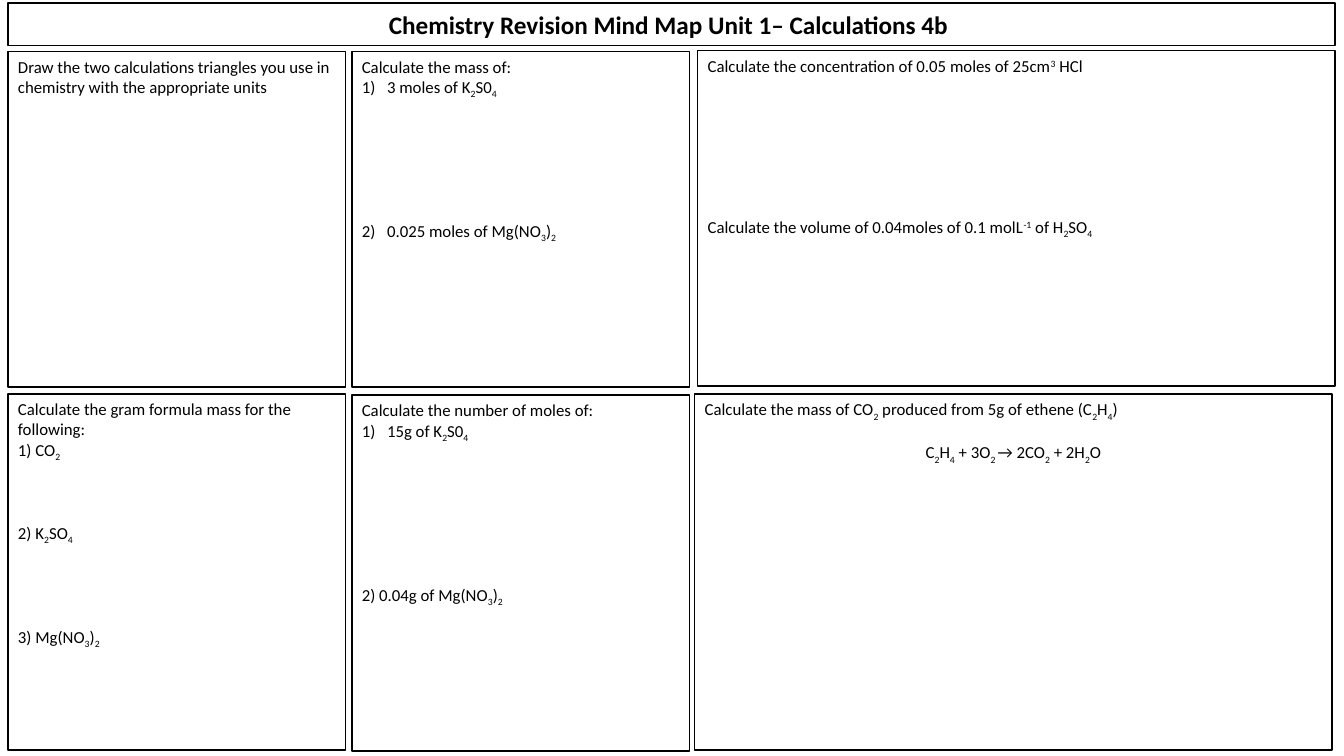
from dataclasses import dataclass

from lxml.etree import SubElement
from pptx import Presentation
from pptx.dml.color import RGBColor
from pptx.enum.shapes import MSO_SHAPE as Shape
from pptx.enum.text import MSO_ANCHOR as Anchor, MSO_AUTO_SIZE as AutoSize, PP_ALIGN as Align
from pptx.oxml.ns import qn
from pptx.util import Inches, Pt


@dataclass(frozen=True)
class Theme:
    font: str = "Calibri"
    ink: RGBColor = RGBColor(0, 0, 0)
    paper: RGBColor = RGBColor(255, 255, 255)
    title_size: float = 18
    body_size: float = 12
    answer_line: float = 14.4  # points per line of answer space
    border: float = 1


def write(para, text, theme, size, bold=False, align=Align.LEFT, gap=0, numbered=False):
    """Write text in which {_2} is a subscript and {^3} a superscript."""
    if numbered:
        props = para._p.get_or_add_pPr()
        props.set("marL", str(Inches(0.25)))
        props.set("indent", str(-Inches(0.25)))
        SubElement(props, qn("a:buFont"), typeface="+mj-lt")
        SubElement(props, qn("a:buAutoNum"), type="arabicParenR")
    para.alignment = align
    if gap:
        para.space_before = Pt(gap * theme.answer_line)
    for part in text.replace("}", "{").split("{"):
        if not part:
            continue
        baseline = {"_": "-25000", "^": "30000"}.get(part[0])
        span = para.add_run()
        span.text = part[1:] if baseline else part
        span.font.name = theme.font
        span.font.size = Pt(size)
        span.font.bold = bold
        span.font.color.rgb = theme.ink
        if baseline:
            span._r.get_or_add_rPr().set("baseline", baseline)


class Worksheet:
    """Holds the theme and slide, and places panels on a grid of columns and rows."""

    left, top = 0.08, 0.51
    column_step, row_step = 3.41, 3.4
    column_widths = (3.35, 3.35, 6.32)
    row_heights = (3.33, 3.53)

    def __init__(self, page, theme):
        self.page, self.theme = page, theme

    def frame(self, box, anchor):
        box.fill.solid()
        box.fill.fore_color.rgb = self.theme.paper
        box.line.color.rgb = self.theme.ink
        box.line.width = Pt(self.theme.border)
        text = box.text_frame
        text.word_wrap = True
        text.auto_size = AutoSize.NONE
        text.vertical_anchor = anchor
        return text

    def title(self, text):
        box = self.page.shapes.title
        box.left, box.top = Inches(self.left), Inches(0.03)
        box.width, box.height = Inches(13.16), Inches(0.42)
        outline = SubElement(box._element.spPr, qn("a:prstGeom"), prst="roundRect")
        SubElement(outline, qn("a:avLst"))
        para = self.frame(box, Anchor.MIDDLE).paragraphs[0]
        write(para, text, self.theme, self.theme.title_size, bold=True, align=Align.CENTER)

    def panel(self, column, row, lines, nudge=(0, 0)):
        box = self.page.shapes.add_shape(
            Shape.RECTANGLE,
            Inches(self.left + column * self.column_step + nudge[0]),
            Inches(self.top + row * self.row_step + nudge[1]),
            Inches(self.column_widths[column]),
            Inches(self.row_heights[row]),
        )
        box.shadow.inherit = False
        frame = self.frame(box, Anchor.TOP)
        for index, (text, style) in enumerate(lines):
            para = frame.add_paragraph() if index else frame.paragraphs[0]
            write(para, text, self.theme, self.theme.body_size, **style)


def main():
    deck = Presentation()
    deck.slide_width, deck.slide_height = Inches(13.33), Inches(7.5)
    page = deck.slides.add_slide(deck.slide_layouts[5])
    sheet = Worksheet(page, Theme())

    # Heading
    sheet.title("Chemistry Revision Mind Map Unit 1– Calculations 4b ")

    # Top row: triangles, masses, concentration and volume
    sheet.panel(0, 0, [
        ("Draw the two calculations triangles you use in chemistry with the appropriate units", {}),
    ])
    sheet.panel(1, 0, [
        ("Calculate the mass of:", {}),
        ("3 moles of K{_2}S0{_4}", {"numbered": True}),
        ("0.025 moles of Mg(NO{_3}){_2}", {"numbered": True, "gap": 6}),
    ])
    sheet.panel(2, 0, [
        ("Calculate the concentration of 0.05 moles of 25cm{^3} HCl", {}),
        ("Calculate the volume of 0.04moles of 0.1 molL{^-1} of H{_2}SO{_4}", {"gap": 7}),
    ], nudge=(0.02, -0.01))

    # Bottom row: formula masses, moles, reacting masses
    sheet.panel(0, 1, [
        ("Calculate the gram formula mass for the following:", {}),
        ("1) CO{_2}", {}),
        ("2) K{_2}SO{_4}", {"gap": 3}),
        ("3) Mg(NO{_3}){_2}", {"gap": 4}),
    ])
    sheet.panel(1, 1, [
        ("Calculate the number of moles of:", {}),
        ("15g of K{_2}S0{_4}", {"numbered": True}),
        ("2) 0.04g of Mg(NO{_3}){_2}", {"gap": 7}),
    ], nudge=(0, 0.01))
    sheet.panel(2, 1, [
        ("Calculate the mass of CO{_2} produced from 5g of ethene (C{_2}H{_4})", {}),
        ("C{_2}H{_4} + 3O{_2 }→ 2CO{_2} + 2H{_2}O", {"align": Align.CENTER, "gap": 1}),
    ], nudge=(-0.01, 0))

    deck.save("out.pptx")


if __name__ == "__main__":
    main()
